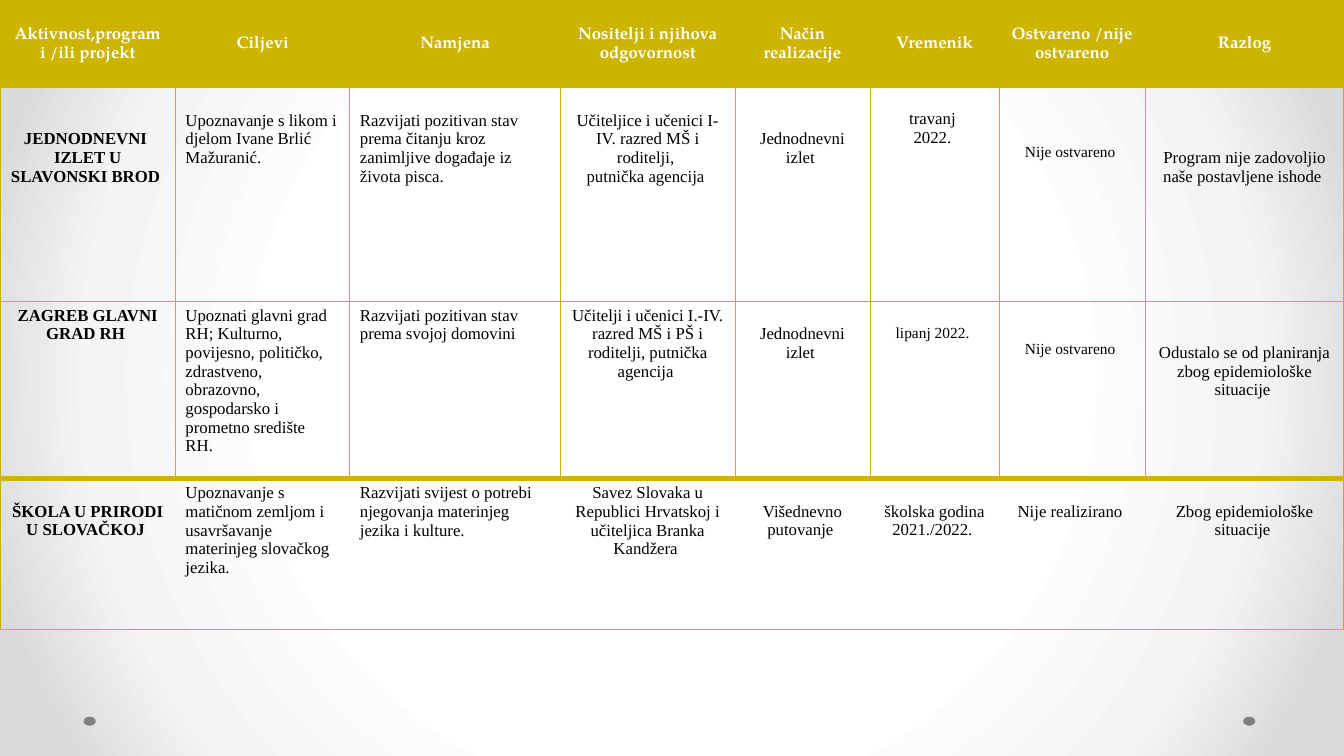
from dataclasses import dataclass

from lxml import etree
from pptx import Presentation
from pptx import util as u
from pptx.dml import color
from pptx.enum import shapes, text
from pptx.oxml import ns, parse_xml

HUES = {"gold": "CCB400", "rule": "C8B000", "dot": "808080",
        "white": "FFFFFF", "black": "000000"}
GLOW = ((50, "FFFFFF"), (76, "F4F4F4"), (92, "DADADA"))
BLANK = "{2D5ABB26-0587-4C30-8999-92F81FD0307C}"
COLS = (1.74, 1.73, 2.09, 1.73, 1.34, 1.28, 1.45, 1.97)
ROWS = (0.87, 2.12, 1.76, 1.5)
LEFT = (1, 2)
LINE = 0.185
HARD = chr(160)


@dataclass
class Entry:
    words: str
    drop: float = 0
    size: int = 12


HEADS = ("Aktivnost,program i /ili projekt", "Ciljevi", "Namjena",
         "Nositelji i njihova odgovornost", "Način realizacije", "Vremenik",
         "Ostvareno /nije ostvareno", "Razlog")

TRIPS = (
    (Entry("JEDNODNEVNI\nIZLET U SLAVONSKI BROD", 2),
     Entry("Upoznavanje s likom i djelom Ivane Brlić Mažuranić.", 1),
     Entry("Razvijati pozitivan stav prema čitanju kroz zanimljive "
           "događaje iz života pisca.", 1),
     Entry("Učiteljice i učenici I-IV. razred MŠ i roditelji,\n"
           "putnička agencija", 1),
     Entry("Jednodnevni izlet", 2),
     Entry("travanj\n2022.", 0.9),
     Entry("Nije ostvareno", 2.75, 11),
     Entry("Program nije zadovoljio naše postavljene ishode", 3)),
    (Entry("ZAGREB GLAVNI GRAD RH"),
     Entry("Upoznati glavni grad RH; Kulturno, povijesno, političko, "
           "zdrastveno, obrazovno, gospodarsko i prometno središte RH."),
     Entry("Razvijati pozitivan stav prema svojoj domovini"),
     Entry("Učitelji i učenici I.-IV. razred MŠ i PŠ i roditelji, "
           "putnička agencija"),
     Entry("Jednodnevni izlet", 1),
     Entry("lipanj 2022.", 1, 11),
     Entry("Nije ostvareno", 1.85, 11),
     Entry("Odustalo se od planiranja zbog epidemiološke situacije", 2)),
    (Entry("ŠKOLA U PRIRODI U SLOVAČKOJ", 1),
     Entry("Upoznavanje s matičnom zemljom i usavršavanje materinjeg "
           "slovačkog jezika."),
     Entry("Razvijati svijest o potrebi njegovanja materinjeg jezika "
           "i kulture."),
     Entry("Savez Slovaka u Republici Hrvatskoj i učiteljica "
           "Branka Kandžera"),
     Entry("Višednevno putovanje", 1),
     Entry("školska godina 2021./2022.", 1),
     Entry("Nije realizirano", 1),
     Entry("Zbog epidemiološke situacije", 1)),
)


def tint(name: str) -> color.RGBColor:
    return color.RGBColor.from_string(HUES[name])


def paint(slide) -> None:
    stops = "".join(f'<a:gs pos="{at * 1000}"><a:srgbClr val="{hue}"/></a:gs>'
                    for at, hue in GLOW)
    slide.element.cSld.insert(0, parse_xml(
        f'<p:bg {ns.nsdecls("p", "a")}><p:bgPr><a:gradFill rotWithShape="1">'
        f'<a:gsLst>{stops}</a:gsLst><a:path path="circle"><a:fillToRect '
        'l="50000" t="50000" r="50000" b="50000"/></a:path></a:gradFill>'
        '<a:effectLst/></p:bgPr></p:bg>'))


def dot(slide, left: float) -> None:
    oval = slide.shapes.add_shape(
        shapes.MSO_SHAPE.OVAL, u.Inches(left), u.Inches(7.11),
        u.Inches(0.12), u.Inches(0.09))
    oval.shadow.inherit = False
    oval.fill.solid()
    oval.fill.fore_color.rgb = tint("dot")
    oval.line.fill.background()


def edge(cell, row: int, col: int) -> None:
    last = row == len(ROWS) - 1
    sides = {"L": not last or col == 0,
             "R": not last or col == len(COLS) - 1, "T": True, "B": True}
    props = cell._tc.get_or_add_tcPr()
    for spot, (side, shown) in enumerate(sides.items()):
        thick = (last and side == "T") or (row == len(ROWS) - 2 and side == "B")
        line = etree.Element(ns.qn(f"a:ln{side}"))
        props.insert(spot, line)
        if shown:
            line.set("w", str(u.Pt(4 if thick else 0.75)))
            fill = etree.SubElement(line, ns.qn("a:solidFill"))
            hue = HUES["gold" if thick else "rule"]
            etree.SubElement(fill, ns.qn("a:srgbClr"), val=hue)
        else:
            line.set("w", "0")
            etree.SubElement(line, ns.qn("a:noFill"))


def write(cell, words: str, face: str, size: int, bold: bool, hue: str,
          left: bool = False):
    para = cell.text_frame.paragraphs[0]
    para.text = words
    para.alignment = text.PP_ALIGN.LEFT if left else text.PP_ALIGN.CENTER
    para.font.name = face
    para.font.size = u.Pt(size)
    para.font.bold = bold
    para.font.color.rgb = tint(hue)
    return para


def head(cell, words: str) -> None:
    cell.fill.solid()
    cell.fill.fore_color.rgb = tint("gold")
    cell.vertical_anchor = text.MSO_ANCHOR.MIDDLE
    cell.margin_left = cell.margin_right = u.Inches(0.04)
    cell.margin_top = cell.margin_bottom = 0
    para = write(cell, words, "TeX Gyre Pagella", 12, True, "white")
    para.line_spacing = 1.15


def body(cell, entry: Entry, col: int) -> None:
    cell.fill.background()
    cell.margin_top = u.Inches(0.05 + LINE * entry.drop)
    words = entry.words.replace("\n", HARD + "\n") + HARD
    write(cell, words, "Times New Roman", entry.size, col == 0, "black",
          col in LEFT)


def plan(slide) -> None:
    frame = slide.shapes.add_table(
        len(ROWS), len(COLS), 0, 0,
        u.Inches(sum(COLS)), u.Inches(sum(ROWS)))
    grid = frame.table
    grid.first_row = grid.horz_banding = False
    grid._tbl.tblPr.find(ns.qn("a:tableStyleId")).text = BLANK
    for part, width in zip(grid.columns, COLS):
        part.width = u.Inches(width)
    for part, height in zip(grid.rows, ROWS):
        part.height = u.Inches(height)
    for col, words in enumerate(HEADS):
        head(grid.cell(0, col), words)
    for row, trip in enumerate(TRIPS, 1):
        for col, entry in enumerate(trip):
            body(grid.cell(row, col), entry, col)
    for row in range(len(ROWS)):
        for col in range(len(COLS)):
            edge(grid.cell(row, col), row, col)


def main() -> None:
    deck = Presentation()
    deck.slide_width = u.Inches(13.33)
    deck.slide_height = u.Inches(7.5)
    slide = deck.slides.add_slide(deck.slide_layouts[6])
    paint(slide)
    for left in (12.33, 0.83):
        dot(slide, left)
    plan(slide)
    deck.save("out.pptx")


if __name__ == "__main__":
    main()
